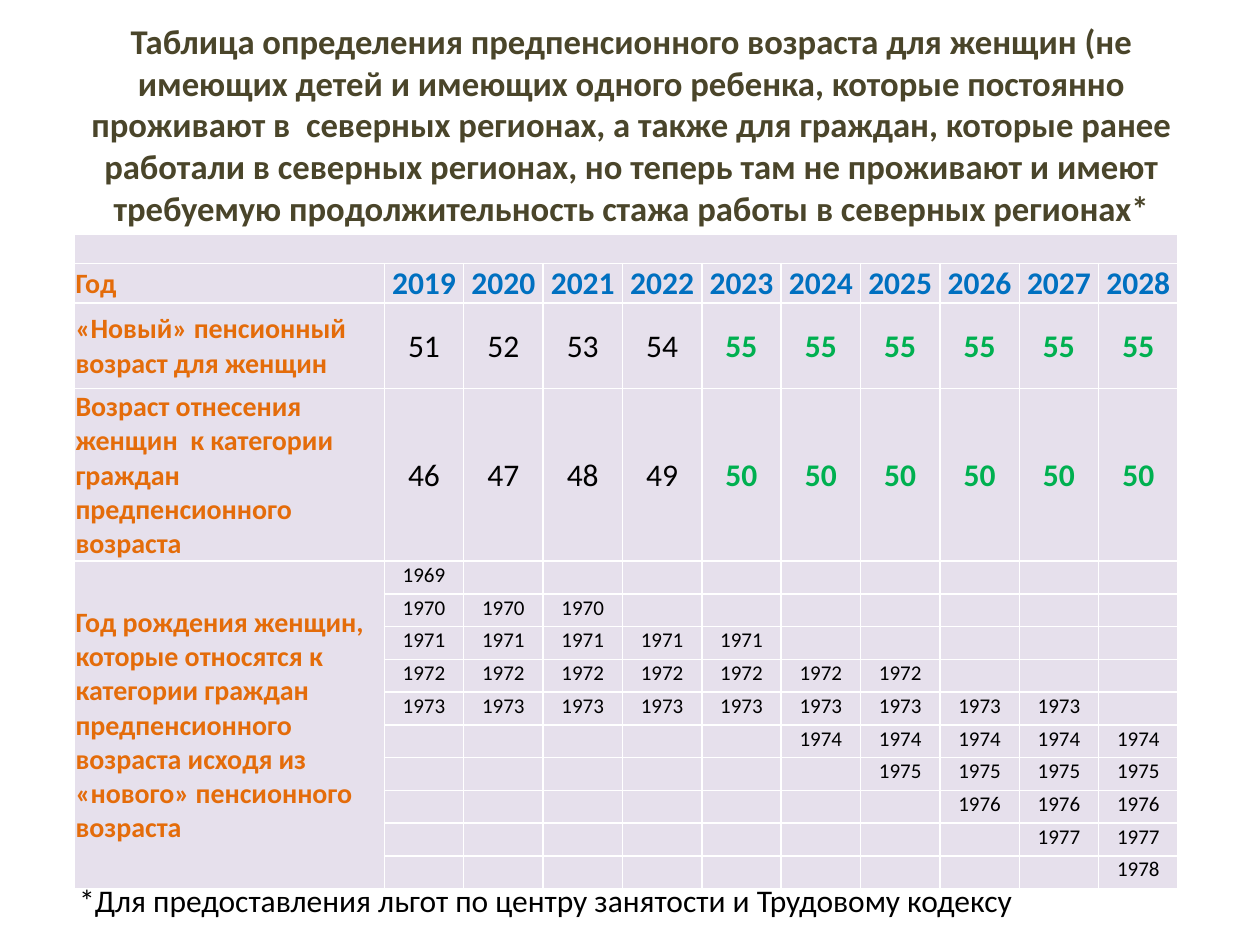
from lxml.etree import SubElement
from pptx import Presentation
from pptx.dml.color import RGBColor
from pptx.enum.text import MSO_ANCHOR, MSO_AUTO_SIZE, PP_ALIGN
from pptx.oxml.ns import qn
from pptx.util import Inches, Pt

TITLE = (
    "Таблица определения предпенсионного возраста для женщин (не имеющих детей "
    "и имеющих одного ребенка, которые постоянно проживают в  северных регионах, "
    "а также для граждан, которые ранее работали в северных регионах, но теперь "
    "там не проживают и имеют требуемую продолжительность стажа работы в северных регионах*"
)
FOOTNOTE = "*Для предоставления льгот по центру занятости и Трудовому кодексу"
YEARS = list(range(2019, 2029))
LABELS = [
    "Год",
    "«Новый» пенсионный возраст для женщин",
    "Возраст отнесения женщин  к категории граждан предпенсионного возраста",
    "Год рождения женщин, которые относятся к категории граждан предпенсионного "
    "возраста исходя из «нового» пенсионного возраста",
]
AGES = [
    [51, 52, 53, 54] + [55] * 6,
    [46, 47, 48, 49] + [50] * 6,
]
BIRTH_YEARS = {
    1969: (2019, 2019),
    1970: (2019, 2021),
    1971: (2019, 2023),
    1972: (2019, 2025),
    1973: (2019, 2027),
    1974: (2024, 2028),
    1975: (2025, 2028),
    1976: (2026, 2028),
    1977: (2027, 2028),
    1978: (2028, 2028),
}
FIRST_FINAL_YEAR = 2023
FIRST_BIRTH_ROW = 4

COLUMN_WIDTHS = [2.46] + [0.63] * len(YEARS)
ROW_HEIGHTS = [0.23, 0.29, 0.68, 1.25] + [0.26] * len(BIRTH_YEARS)

FONT = "Calibri"
OLIVE, ORANGE, BLUE, GREEN = "4A452A", "E46C0A", "0070C0", "00B050"
BLACK, WHITE, LILAC = "000000", "FFFFFF", "E6E0EC"


def color(value):
    return RGBColor.from_string(value)


def write(frame, text, size=18, fill=BLACK, bold=False, align=PP_ALIGN.LEFT):
    paragraph = frame.paragraphs[0]
    paragraph.alignment = align
    run = paragraph.add_run()
    run.text = str(text)
    run.font.name = FONT
    run.font.size = Pt(size)
    run.font.bold = bold
    run.font.color.rgb = color(fill)


def prepare_cell(cell):
    cell.margin_left = cell.margin_right = cell.margin_top = Inches(0.01)
    cell.margin_bottom = 0
    properties = cell._tc.get_or_add_tcPr()
    for side in ("a:lnL", "a:lnR", "a:lnT", "a:lnB"):
        line = SubElement(properties, qn(side), w=str(Pt(1)))
        SubElement(SubElement(line, qn("a:solidFill")), qn("a:srgbClr"), val=WHITE)
    cell.fill.solid()
    cell.fill.fore_color.rgb = color(LILAC)


def write_cell(cell, text, anchor=MSO_ANCHOR.MIDDLE, align=PP_ALIGN.CENTER, **style):
    cell.vertical_anchor = anchor
    write(cell.text_frame, text, align=align, **style)


def add_title(slide):
    title = slide.shapes.title
    title.left, title.top = Inches(0.51), Inches(0.36)
    title.width, title.height = Inches(9), Inches(1.25)
    frame = title.text_frame
    frame.auto_size = MSO_AUTO_SIZE.NONE
    frame.vertical_anchor = MSO_ANCHOR.MIDDLE
    write(frame, TITLE, size=19.8, fill=OLIVE, bold=True, align=PP_ALIGN.CENTER)


def add_age_table(slide):
    table = slide.shapes.add_table(
        len(ROW_HEIGHTS), len(COLUMN_WIDTHS), Inches(0.59), Inches(1.86),
        Inches(sum(COLUMN_WIDTHS)), Inches(sum(ROW_HEIGHTS)),
    ).table
    table.first_row = table.horz_banding = False
    for column, width in zip(table.columns, COLUMN_WIDTHS):
        column.width = Inches(width)
    for row, height in zip(table.rows, ROW_HEIGHTS):
        row.height = Inches(height)
    for cell in table.iter_cells():
        prepare_cell(cell)
    table.cell(0, 0).merge(table.cell(0, len(YEARS)))
    table.cell(FIRST_BIRTH_ROW, 0).merge(table.cell(len(ROW_HEIGHTS) - 1, 0))

    for row, label in enumerate(LABELS, 1):
        write_cell(table.cell(row, 0), label, align=PP_ALIGN.LEFT,
                   size=16, fill=ORANGE, bold=True)
    for column, year in enumerate(YEARS, 1):
        write_cell(table.cell(1, column), year, fill=BLUE, bold=True)
        final = year >= FIRST_FINAL_YEAR
        for row, ages in enumerate(AGES, 2):
            write_cell(table.cell(row, column), ages[column - 1],
                       fill=GREEN if final else BLACK, bold=final)
        for row, (birth_year, (first, last)) in enumerate(BIRTH_YEARS.items(), FIRST_BIRTH_ROW):
            if first <= year <= last:
                write_cell(table.cell(row, column), birth_year, anchor=MSO_ANCHOR.TOP, size=12)

    for cell in table.iter_cells():
        if not cell.text_frame.text:
            SubElement(cell.text_frame.paragraphs[0]._p, qn("a:endParaRPr"), sz="1200")


def add_footnote(slide):
    box = slide.shapes.add_textbox(Inches(0.53), Inches(6.94), Inches(8.98), Inches(0.4))
    box.text_frame.word_wrap = True
    box.text_frame.auto_size = MSO_AUTO_SIZE.SHAPE_TO_FIT_TEXT
    write(box.text_frame, FOOTNOTE)


def main():
    presentation = Presentation()
    presentation.slide_width, presentation.slide_height = Inches(10), Inches(7.5)
    slide = presentation.slides.add_slide(presentation.slide_layouts[5])
    add_title(slide)
    add_age_table(slide)
    add_footnote(slide)
    presentation.save("out.pptx")


if __name__ == "__main__":
    main()
